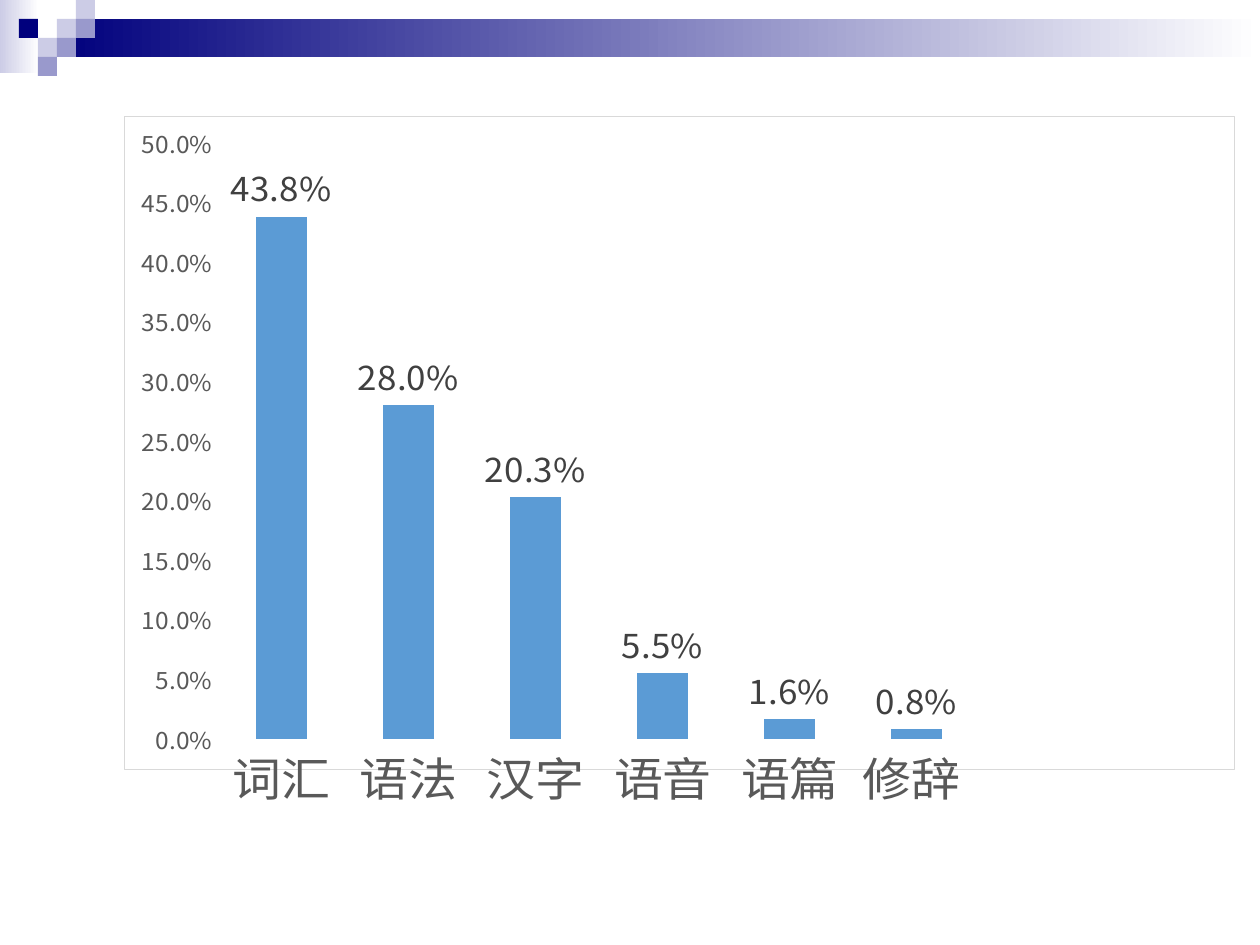
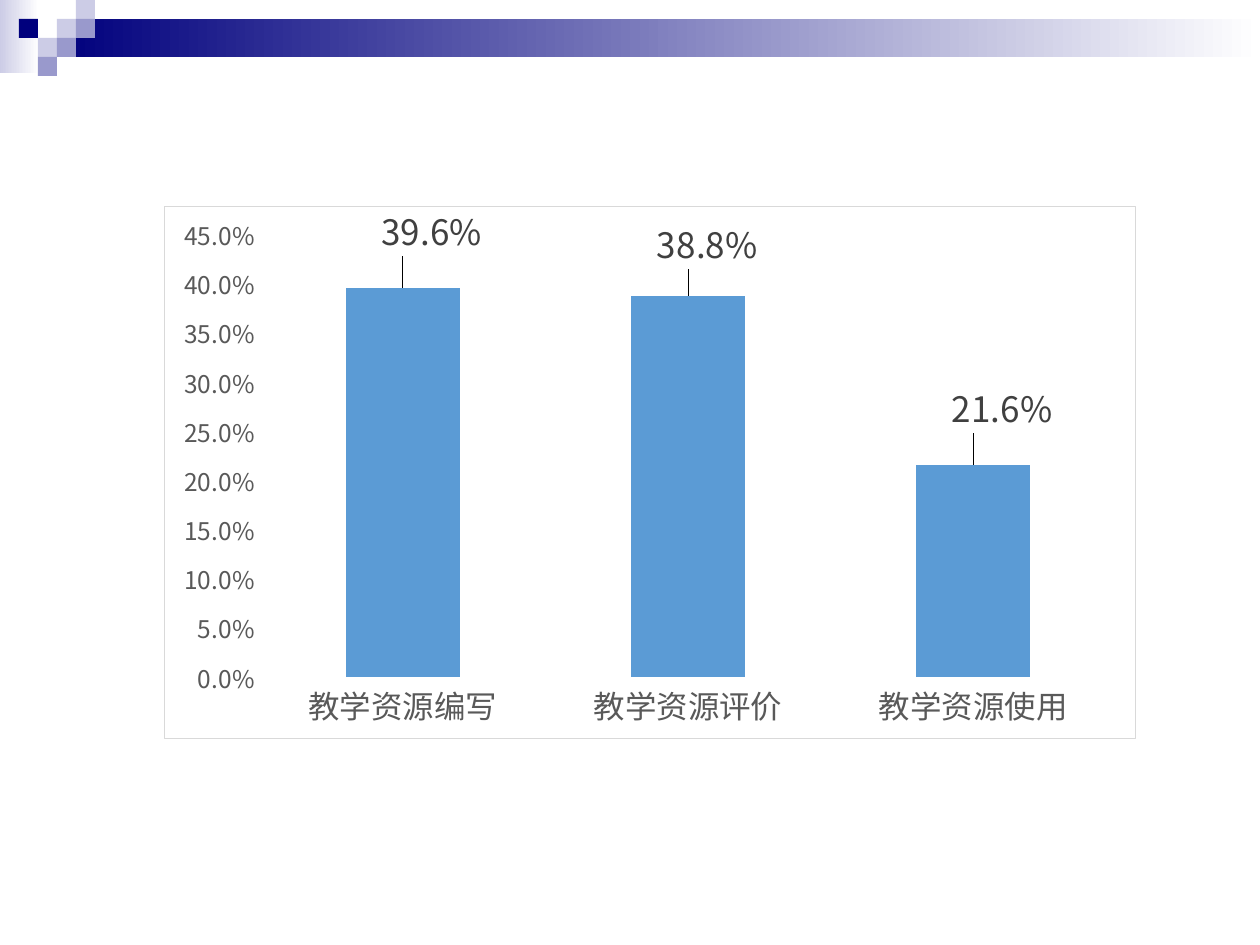
from lxml import etree
from pptx import Presentation, util as u
from pptx.chart import data
from pptx.dml.color import RGBColor
from pptx.enum import chart as ch, shapes
from pptx.oxml import parse_xml
from pptx.oxml.ns import nsdecls, qn

PX = 914400 / 126
NAVY = RGBColor(0x00, 0x00, 0x7D)
PALE = RGBColor(0xCC, 0xCC, 0xE6)
LILAC = RGBColor(0x99, 0x99, 0xCC)
WHITE = RGBColor(0xFF, 0xFF, 0xFF)
BLACK = RGBColor(0x00, 0x00, 0x00)
BLUE = RGBColor(0x5B, 0x9B, 0xD5)
GREY = RGBColor(0x59, 0x59, 0x59)
DARK = RGBColor(0x40, 0x40, 0x40)
EDGE = RGBColor(0xD9, 0xD9, 0xD9)
SANS = "Noto Sans CJK SC"
PCT = "0.0%"
CELL = 19
TILES = [(3, 1, PALE), (4, 0, PALE), (4, 1, LILAC), (2, 2, PALE),
         (1, 1, NAVY), (3, 2, LILAC), (2, 3, LILAC)]


def emu(*nums):
    return [u.Emu(round(n * PX)) for n in nums]


def apply(item, **vals):
    for key, val in vals.items():
        setattr(item, key, val)


def style(font, size, color, name=SANS):
    apply(font, size=u.Pt(size), bold=False, name=name)
    font.color.rgb = color
    etree.SubElement(font._rPr, qn("a:ea")).set("typeface", name)


def layout(**vals):
    parts = "".join(f'<c:{key} val="{val}"/>' for key, val in vals.items())
    return parse_xml(f'<c:layout {nsdecls("c")}><c:manualLayout>{parts}'
                     '</c:manualLayout></c:layout>')


class Deck:
    def __init__(self):
        self.prs = Presentation()
        wide, high = emu(1260, 945)
        apply(self.prs, slide_width=wide, slide_height=high)
        self.slide = None

    def page(self):
        self.slide = self.prs.slides.add_slide(self.prs.slide_layouts[6])
        self.rect(0, 0, 39, 73, PALE, WHITE)
        self.rect(3 * CELL, CELL, 1260 - 3 * CELL, 2 * CELL, NAVY, WHITE)
        for col, row, color in TILES:
            self.rect(col * CELL, row * CELL, CELL, CELL, color)

    def rect(self, x, y, w, h, color, fade=None):
        box = self.slide.shapes.add_shape(shapes.MSO_SHAPE.RECTANGLE, *emu(x, y, w, h))
        box.shadow.inherit = False
        box.line.fill.background()
        if fade is None:
            box.fill.solid()
            box.fill.fore_color.rgb = color
            return
        box.fill.gradient()
        box.fill.gradient_angle = 0
        for stop, tone in zip(box.fill.gradient_stops, (color, fade)):
            stop.color.rgb = tone

    def axis(self, axis, size, fmt):
        apply(axis, has_major_gridlines=False, major_tick_mark=ch.XL_TICK_MARK.NONE,
              minor_tick_mark=ch.XL_TICK_MARK.NONE)
        axis.format.line.fill.background()
        apply(axis.tick_labels, number_format=fmt, number_format_is_linked=False)
        style(axis.tick_labels.font, size, GREY)

    def frame(self, chart):
        props = parse_xml(
            f'<c:spPr {nsdecls("c", "a")}><a:solidFill><a:srgbClr val="{WHITE}"/></a:solidFill>'
            f'<a:ln w="9525"><a:solidFill><a:srgbClr val="{EDGE}"/></a:solidFill></a:ln></c:spPr>')
        chart._chartSpace.find(qn("c:txPr")).addprevious(props)

    def shift(self, series, moves):
        for num, (x, y) in enumerate(moves):
            label = series.points[num].data_label
            style(label.font, 20, DARK)
            label.position = ch.XL_LABEL_POSITION.OUTSIDE_END
            mark = series._element.findall(".//" + qn("c:dLbl"))[num].find(qn("c:idx"))
            mark.addnext(parse_xml(
                f'<c:numFmt {nsdecls("c")} formatCode="{PCT}" sourceLinked="0"/>'))
            mark.addnext(layout(x=x, y=y))

    def bars(self, spot, cats, vals, size, top, plot=None, moves=()):
        info = data.CategoryChartData(number_format=PCT)
        info.categories = cats
        info.add_series("Series 1", vals)
        chart = self.slide.shapes.add_chart(
            ch.XL_CHART_TYPE.COLUMN_CLUSTERED, *emu(*spot), info).chart
        apply(chart, has_legend=False, has_title=False)
        style(chart.font, 10, BLACK, "Arial")
        self.frame(chart)
        self.axis(chart.category_axis, size, "General")
        self.axis(chart.value_axis, 14, PCT)
        apply(chart.value_axis, minimum_scale=0, maximum_scale=top, major_unit=0.05)
        group = chart.plots[0]
        apply(group, gap_width=150, vary_by_categories=False)
        series = group.series[0]
        series.format.fill.solid()
        series.format.fill.fore_color.rgb = BLUE
        labels = series.data_labels
        apply(labels, show_value=True, number_format=PCT, number_format_is_linked=False,
              position=ch.XL_LABEL_POSITION.OUTSIDE_END)
        style(labels.font, 20, DARK)
        self.shift(series, moves)
        if plot:
            area = chart._chartSpace.find(".//" + qn("c:plotArea"))
            for old in area.findall(qn("c:layout")):
                area.remove(old)
            x, y, w, h = plot
            area.insert(0, layout(layoutTarget="inner", xMode="edge", yMode="edge",
                                  x=x, y=y, w=w, h=h))


def main():
    deck = Deck()
    deck.page()
    deck.bars((124, 116, 1111, 694),
              ["词汇", "语法", "汉字", "语音", "语篇", "修辞 ", "", ""],
              [0.438, 0.28, 0.203, 0.055, 0.016, 0.008, None, None],
              28, 0.5, plot=(0.084, 0.04, 0.916, 0.913))
    deck.page()
    deck.bars((164, 205, 972, 534),
              ["教学资源编写", "教学资源评价", "教学资源使用"],
              [0.396, 0.388, 0.216], 18, 0.45,
              moves=[(0.03, -0.05), (0.02, -0.04), (0.03, -0.05)])
    deck.prs.save("out.pptx")


if __name__ == "__main__":
    main()
